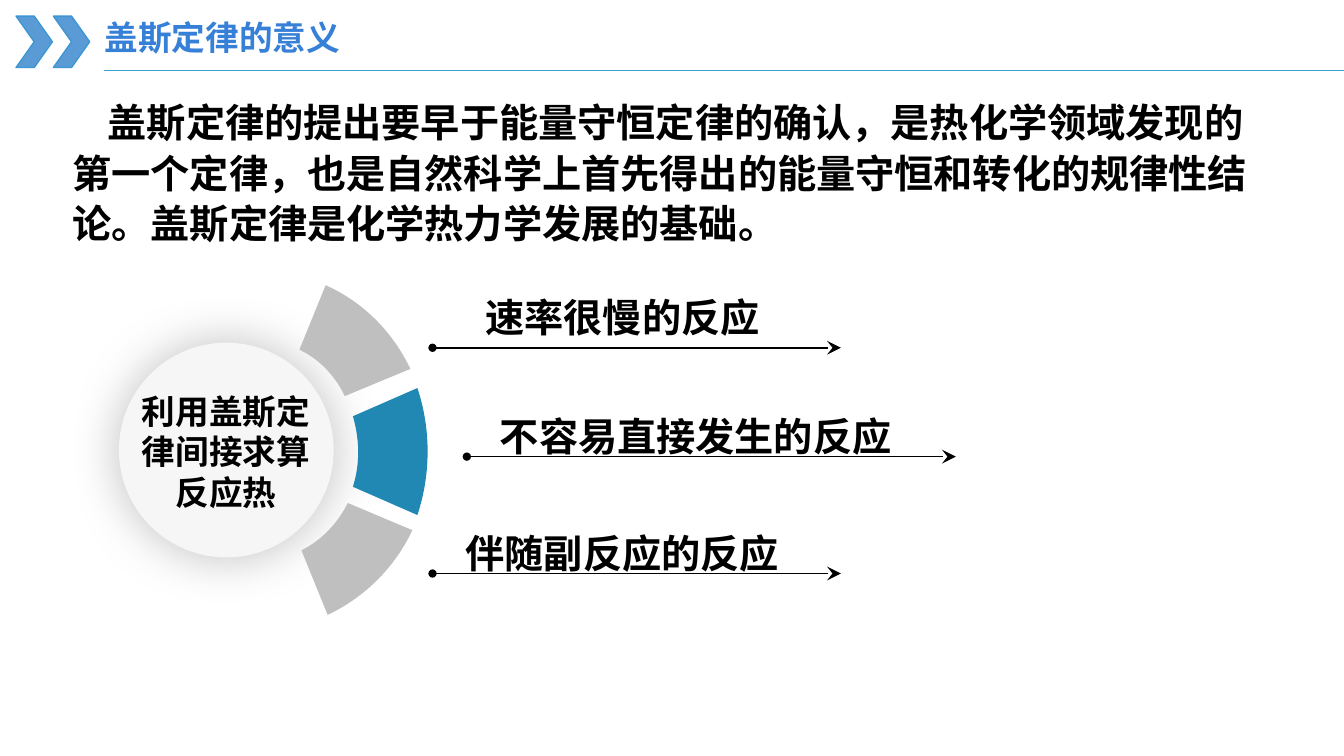
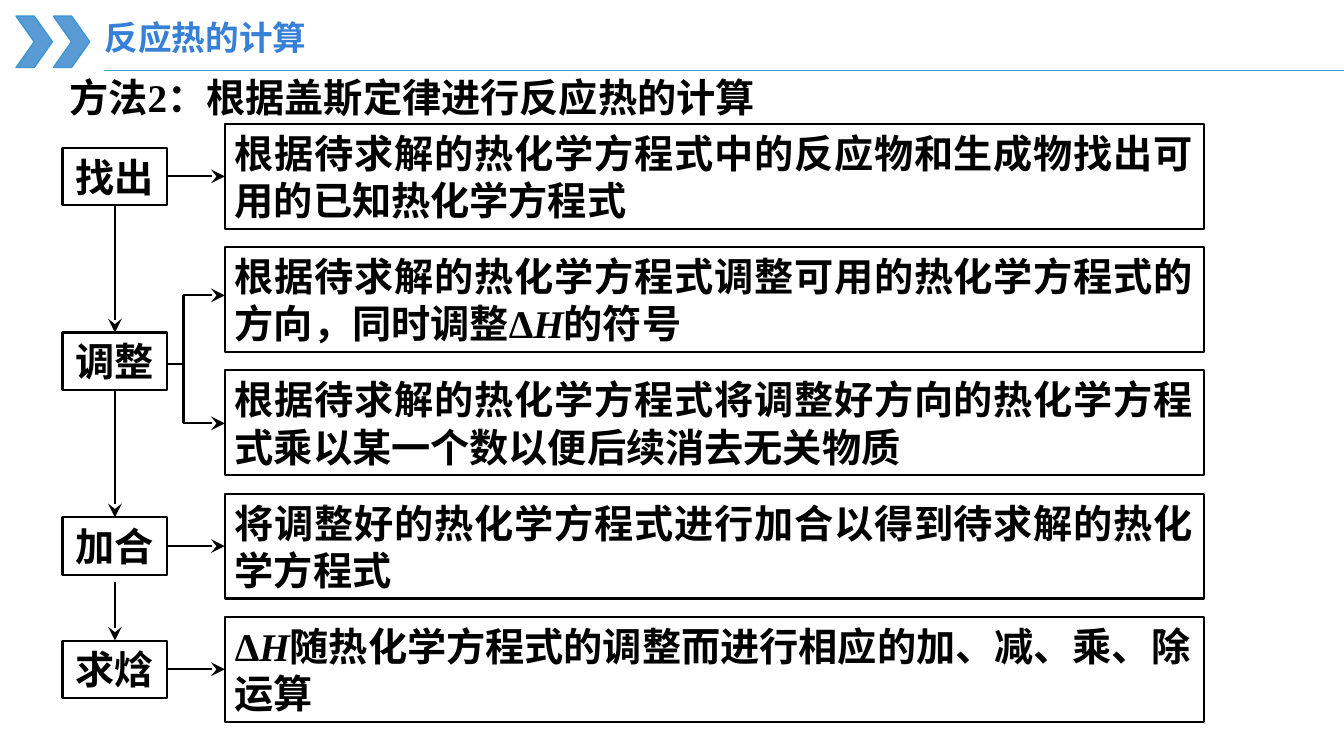
import pptx
import pptx.dml.color
import pptx.enum.shapes
import pptx.enum.text
import pptx.oxml.ns
import pptx.util
from lxml import etree

Inches = pptx.util.Inches
Pt = pptx.util.Pt
RGBColor = pptx.dml.color.RGBColor
ALIGN = pptx.enum.text.PP_ALIGN
ANCHOR = pptx.enum.text.MSO_ANCHOR
SHAPE = pptx.enum.shapes.MSO_SHAPE
qn = pptx.oxml.ns.qn

BLACK = RGBColor(0x00, 0x00, 0x00)
TITLE_BLUE = RGBColor(0x37, 0x80, 0xD7)
CHEVRON_FILL = RGBColor(0x5B, 0x9B, 0xD5)
CHEVRON_LINE = RGBColor(0x3B, 0x96, 0xD3)
RULE_BLUE = RGBColor(0x3D, 0xA1, 0xD2)
DISC_FILL = RGBColor(0xF6, 0xF6, 0xF6)
SECTOR_BLUE = RGBColor(0x21, 0x88, 0xB4)
SECTOR_GREY = RGBColor(0xBF, 0xBF, 0xBF)

SANS = "Noto Sans CJK SC"
SERIF = "Times New Roman"


def write_text(shape, runs, size=28, font=SANS, color=BLACK, align=ALIGN.LEFT,
               spacing=None, indent=None, anchor=ANCHOR.TOP):
    """Fill a shape with one bold paragraph of (text, italic) runs."""
    frame = shape.text_frame
    frame.word_wrap = True
    frame.vertical_anchor = anchor
    paragraph = frame.paragraphs[0]
    paragraph.alignment = align
    if spacing is not None:
        paragraph.line_spacing = spacing
    if indent is not None:
        paragraph._p.get_or_add_pPr().set("indent", str(indent))
    paragraph.font.name = font
    paragraph.font.size = Pt(size)
    paragraph.font.bold = True
    paragraph.font.color.rgb = color
    # Chinese characters always use the sans face
    defaults = paragraph._p.pPr.find(qn("a:defRPr"))
    latin = defaults.find(qn("a:latin"))
    latin.addnext(etree.Element(qn("a:ea"), typeface=SANS))
    for text, italic in runs:
        run = paragraph.add_run()
        run.text = text
        if italic:
            run.font.italic = True


def add_text(slide, left, top, width, height, text, **style):
    box = slide.shapes.add_textbox(Inches(left), Inches(top), Inches(width), Inches(height))
    write_text(box, [(text, False)], **style)


def paint(shape, fill=None, line=None, weight=1):
    shape.shadow.inherit = False
    if fill is None:
        shape.fill.background()
    else:
        shape.fill.solid()
        shape.fill.fore_color.rgb = fill
    if line is None:
        shape.line.fill.background()
    else:
        shape.line.color.rgb = line
        shape.line.width = Pt(weight)


def add_shape(slide, kind, left, top, width, height, **colors):
    shape = slide.shapes.add_shape(kind, Inches(left), Inches(top), Inches(width), Inches(height))
    paint(shape, **colors)
    return shape


def add_line(slide, start, end, color=BLACK, weight=1.5, dot=False, arrow=False):
    connector = slide.shapes.add_connector(
        pptx.enum.shapes.MSO_CONNECTOR.STRAIGHT,
        Inches(start[0]), Inches(start[1]), Inches(end[0]), Inches(end[1]))
    connector.line.color.rgb = color
    connector.line.width = Pt(weight)
    line = connector.line._get_or_add_ln()
    if dot:
        etree.SubElement(line, qn("a:headEnd"), type="oval")
    if arrow:
        etree.SubElement(line, qn("a:tailEnd"), type="stealth", w="lg", len="lg")
    etree.SubElement(connector._element.spPr, qn("a:effectLst"))


def add_sector(slide, outer_arc, inner_arc, color):
    """Draw a ring sector; each arc is start, two control points and end."""
    points = [(Inches(x), Inches(y)) for x, y in outer_arc + inner_arc]
    builder = slide.shapes.build_freeform(*points[0])
    builder.add_line_segments(points[1:], close=True)
    sector = builder.convert_to_shape()
    paint(sector, fill=color)
    # Merge the three segments of each arc into one curve
    segments = list(sector._element.iter(qn("a:lnTo")))
    for arc in (segments[:3], segments[4:7]):
        curve = etree.Element(qn("a:cubicBezTo"))
        arc[0].addprevious(curve)
        for segment in arc:
            curve.append(segment[0])
            segment.getparent().remove(segment)


def add_glow(shape, color, blur, opacity):
    effects = shape._element.spPr.find(qn("a:effectLst"))
    shadow = etree.SubElement(effects, qn("a:outerShdw"), blurRad=str(Pt(blur)),
                              dist="0", dir="0", algn="ctr", rotWithShape="0")
    tint = etree.SubElement(shadow, qn("a:srgbClr"), val=str(color))
    etree.SubElement(tint, qn("a:alpha"), val=str(opacity * 1000))


def add_titled_slide(presentation, title):
    slide = presentation.slides.add_slide(presentation.slide_layouts[6])
    for left in (0.16, 0.53):
        add_shape(slide, SHAPE.CHEVRON, left, 0.16, 0.36, 0.51,
                  fill=CHEVRON_FILL, line=CHEVRON_LINE)
    add_line(slide, (1.03, 0.7), (13.33, 0.7), color=RULE_BLUE, weight=0.5)
    add_text(slide, 0.94, 0.12, 3.45, 0.5, title, size=24, color=TITLE_BLUE)
    return slide


def build_significance(presentation):
    slide = add_titled_slide(presentation, "盖斯定律的意义")
    add_text(slide, 0.62, 0.9, 11.91, 1.61,
             "盖斯定律的提出要早于能量守恒定律的确认，是热化学领域发现的第一个定律，"
             "也是自然科学上首先得出的能量守恒和转化的规律性结论。"
             "盖斯定律是化学热力学发展的基础。",
             spacing=Pt(35.8), indent=Inches(0.35))

    # Central disc and the three sectors around it
    disc = add_shape(slide, SHAPE.OVAL, 1.18, 3.4, 2.13, 2.13, fill=DISC_FILL)
    add_glow(disc, SECTOR_GREY, blur=35, opacity=97)
    add_text(slide, 1.3, 3.83, 1.88, 1.31, "利用盖斯定律间接求算反应热",
             size=24, align=ALIGN.CENTER)
    add_sector(slide, [(4.14, 3.85), (4.28, 4.27), (4.27, 4.72), (4.14, 5.11)],
               [(3.5, 4.83), (3.57, 4.61), (3.57, 4.37), (3.5, 4.13)], SECTOR_BLUE)
    add_sector(slide, [(4.09, 5.26), (3.92, 5.62), (3.63, 5.92), (3.25, 6.1)],
               [(2.99, 5.46), (3.19, 5.36), (3.35, 5.19), (3.45, 4.99)], SECTOR_GREY)
    add_sector(slide, [(3.23, 2.83), (3.59, 2.99), (3.89, 3.28), (4.07, 3.66)],
               [(3.42, 3.93), (3.32, 3.72), (3.16, 3.56), (2.97, 3.47)], SECTOR_GREY)

    # Kinds of reaction, each above its arrow
    for start, end, y in ((4.29, 8.34, 3.45), (4.63, 9.48, 4.53), (4.29, 8.34, 5.69)):
        add_line(slide, (start, y), (end, y), weight=1.25, dot=True, arrow=True)
    add_text(slide, 4.51, 2.86, 3.33, 0.57, "速率很慢的反应", align=ALIGN.CENTER)
    for left, top, height, text in ((4.86, 3.95, 0.67, "不容易直接发生的反应"),
                                    (4.52, 5.11, 0.62, "伴随副反应的反应")):
        add_text(slide, left, top, 4.62, height, text, align=ALIGN.JUSTIFY, spacing=1.2)


def build_calculation(presentation):
    slide = add_titled_slide(presentation, "反应热的计算")
    add_text(slide, 0.59, 0.68, 10.51, 0.57, "方法2：根据盖斯定律进行反应热的计算", font=SERIF)

    step_left, step_width, step_height = 0.62, 1.04, 0.57
    detail_left, detail_width, detail_height = 2.23, 9.71, 1.04
    step_right = step_left + step_width
    step_center = step_left + step_width / 2

    def row_center(row):
        return 1.75 + 4.89 / 4 * row

    def add_box(left, middle, width, height, runs, align):
        box = add_shape(slide, SHAPE.RECTANGLE, left, middle - height / 2, width, height,
                        line=BLACK, weight=1.5)
        write_text(box, runs, font=SERIF, align=align, anchor=ANCHOR.MIDDLE)

    # Explanations
    details = [
        [("根据待求解的热化学方程式中的反应物和生成物找出可用的已知热化学方程式", False)],
        [("根据待求解的热化学方程式调整可用的热化学方程式的方向，同时调整Δ", False),
         ("H", True), ("的符号", False)],
        [("根据待求解的热化学方程式将调整好方向的热化学方程式乘以某一个数以便后续消去无关物质", False)],
        [("将调整好的热化学方程式进行加合以得到待求解的热化学方程式", False)],
        [("Δ", False), ("H", True),
         ("随热化学方程式的调整而进行相应的加、减、乘、除运算", False)],
    ]
    for row, runs in enumerate(details):
        align = ALIGN.LEFT if row == len(details) - 1 else ALIGN.JUSTIFY
        add_box(detail_left, row_center(row), detail_width, detail_height, runs, align)

    # Steps; the second one lies between two explanations
    step_rows = {"找出": 0, "调整": 1.5, "加合": 3, "求焓": 4}
    middles = [row_center(row) for row in step_rows.values()]
    for name, middle in zip(step_rows, middles):
        add_box(step_left, middle, step_width, step_height, [(name, False)], ALIGN.CENTER)

    # Arrows from steps to explanations, with a fork for the second step
    fork, fork_top, fork_bottom = 1.82, 2.93, 4.2
    arrows = [(step_right, row_center(row)) for row in (0, 3, 4)]
    arrows += [(fork, fork_top), (fork, fork_bottom)]
    for x, y in arrows:
        add_line(slide, (x, y), (detail_left, y), arrow=True)
    add_line(slide, (fork, fork_bottom), (fork, fork_top))
    add_line(slide, (fork, 3.61), (step_right, 3.61))

    # Arrows from step to step; the last one starts just below its box
    for upper, lower, gap in zip(middles, middles[1:], (0, 0, 0.07)):
        add_line(slide, (step_center, upper + step_height / 2 + gap),
                 (step_center, lower - step_height / 2), arrow=True)


def main():
    presentation = pptx.Presentation()
    presentation.slide_width = Inches(13.33)
    presentation.slide_height = Inches(7.5)
    build_significance(presentation)
    build_calculation(presentation)
    presentation.save("out.pptx")


if __name__ == "__main__":
    main()
